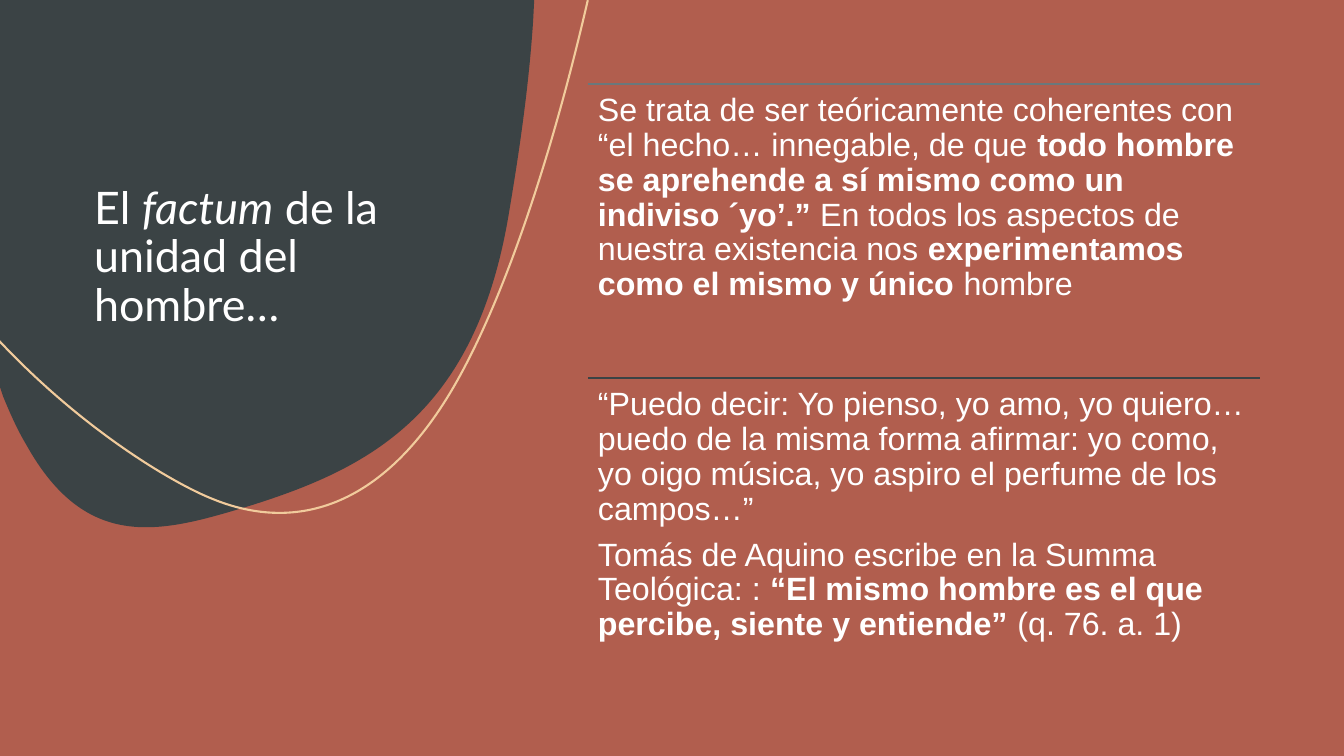
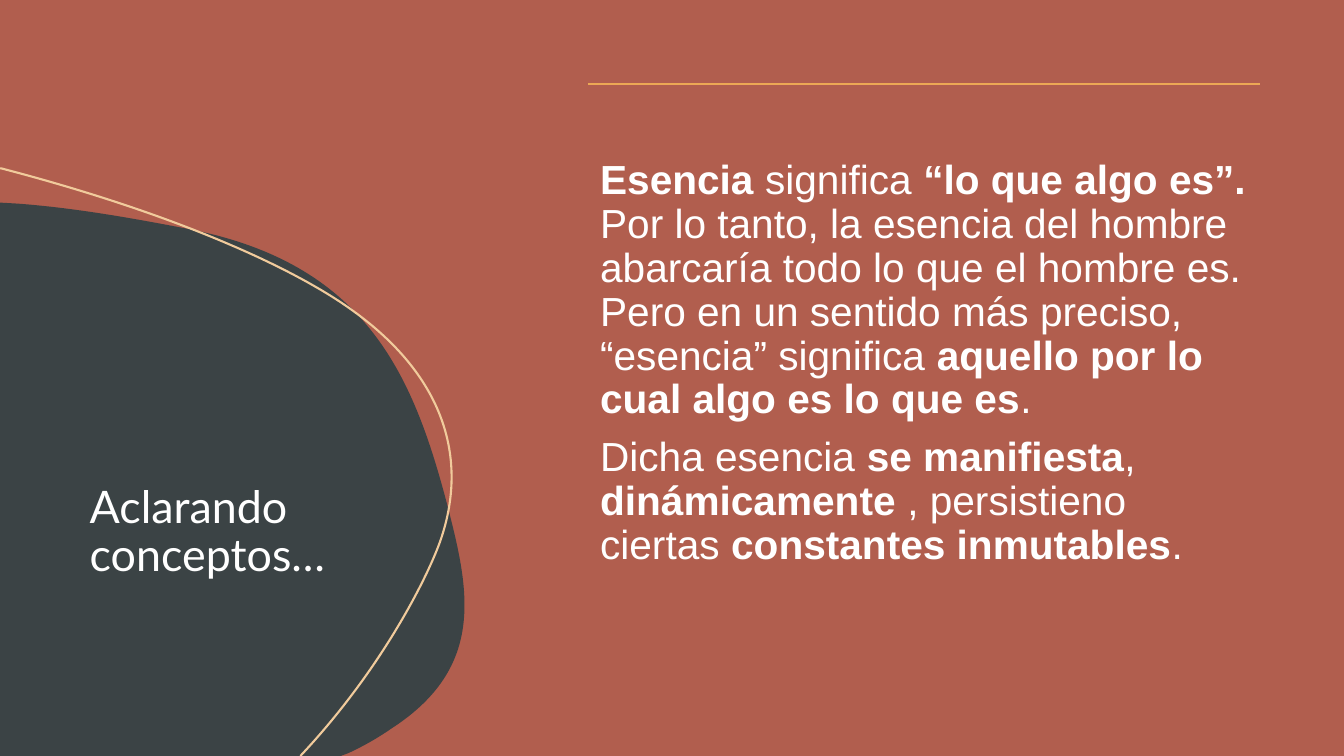
import pptx
import pptx.util
import pptx.dml.color
import pptx.enum.shapes
import pptx.enum.text
import pptx.oxml.ns
from lxml import etree

Inches, Pt = pptx.util.Inches, pptx.util.Pt
RGBColor = pptx.dml.color.RGBColor
qn = pptx.oxml.ns.qn

TERRACOTTA = RGBColor(0xB1, 0x5E, 0x4E)
SLATE = RGBColor(0x3B, 0x43, 0x45)
SLATE_LIGHT = RGBColor(0x6A, 0x78, 0x7C)
SAND = RGBColor(0xF1, 0xCB, 0x9C)
AMBER = RGBColor(0xEC, 0xA8, 0x55)
WHITE = RGBColor(0xFF, 0xFF, 0xFF)

TITLE_FONT, BODY_FONT = "Lato", "Arial"
SLIDE_W, SLIDE_H = 40 / 3, 7.5
MARGIN = SLIDE_W / 16
BODY_X, BODY_Y, BODY_W = 7 * MARGIN, MARGIN, 8 * MARGIN
PANEL_H = 3.5 * MARGIN

TOP_BLOB = (0, 0, 5.3, 5.23), [
    (5.3, 0), (5.29, 0.2),
    (5.25, 0.82, 5.16, 1.46, 5.05, 2.11),
    (4.72, 4.11, 3.67, 4.65, 2.44, 5.03),
    (1.61, 5.28, 0.86, 5.49, 0.26, 4.41),
    (0.17, 4.26, 0.1, 4.1, 0.03, 3.93),
    (0, 3.84), (0, 0), (5.3, 0),
]
TOP_ARC = (0, 0, 5.83, 5.09), [
    (5.83, 0), (5.83, 0.01),
    (5.47, 1.57, 5.01, 2.93, 4.54, 3.77),
    (3.83, 5.04, 2.94, 5.29, 2.11, 4.95),
    (1.73, 4.8, 0.84, 4.28, 0, 3.39),
    (0, 3.38),
]
BOTTOM_BLOB = (0, 2.01, 4.61, 5.49), [
    (0, 2.01), (0.17, 2.02),
    (0.72, 2.06, 1.29, 2.16, 1.86, 2.27),
    (3.62, 2.61, 4.09, 3.7, 4.43, 4.98),
    (4.65, 5.83, 4.84, 6.61, 3.88, 7.23),
    (3.75, 7.32, 3.61, 7.4, 3.46, 7.47),
    (3.38, 7.5), (0, 7.5), (0, 2.01),
]
BOTTOM_ARC = (0, 1.67, 4.48, 5.83), [
    (0, 1.67), (0.01, 1.67),
    (1.39, 2.03, 2.58, 2.49, 3.32, 2.96),
    (4.43, 3.67, 4.66, 4.56, 4.36, 5.39),
    (4.22, 5.77, 3.77, 6.66, 2.98, 7.5),
    (2.98, 7.5),
]


def add_curve(s, outline, fill=None, line=None):
    """Draw a filled closed shape or an open stroked curve with Bézier segments."""
    (x, y, w, h), segments = outline
    ends = [(Inches(seg[-2]), Inches(seg[-1])) for seg in segments]
    fb = s.shapes.build_freeform(*ends[0])
    fb.add_line_segments(ends[1:], close=fill is not None)
    sp = fb.convert_to_shape()
    sp.left, sp.top, sp.width, sp.height = map(Inches, (x, y, w, h))
    outline_el = next(sp._element.iter(qn("a:path")))
    outline_el.set("w", str(Inches(w)))
    outline_el.set("h", str(Inches(h)))
    for el, seg in zip(list(outline_el), segments):
        for pt in list(el):
            el.remove(pt)
        if len(seg) == 6:
            curve = etree.Element(qn("a:cubicBezTo"))
            outline_el.replace(el, curve)
            el = curve
        for px, py in zip(seg[::2], seg[1::2]):
            etree.SubElement(el, qn("a:pt"), x=str(Inches(px - x)), y=str(Inches(py - y)))
    sp.shadow.inherit = False
    if fill is None:
        sp.fill.background()
        sp.line.color.rgb = line
        sp.line.width = Pt(1.5)
    else:
        sp.fill.solid()
        sp.fill.fore_color.rgb = fill
        sp.line.fill.background()


def add_backdrop(s, color):
    """Cover the slide with one colour."""
    s.background.fill.solid()
    s.background.fill.fore_color.rgb = color
    sp = s.shapes.add_shape(pptx.enum.shapes.MSO_SHAPE.RECTANGLE,
                            0, 0, Inches(SLIDE_W), Inches(SLIDE_H))
    sp.shadow.inherit = False
    sp.fill.solid()
    sp.fill.fore_color.rgb = color
    sp.line.fill.background()


def add_rule(s, x, y, w, color):
    """Draw a thin horizontal rule."""
    cx = s.shapes.add_connector(pptx.enum.shapes.MSO_CONNECTOR.STRAIGHT,
                                Inches(x), Inches(y), Inches(x + w), Inches(y))
    cx.line.color.rgb = color
    cx.line.width = Pt(1)
    etree.SubElement(cx._element.spPr, qn("a:effectLst"))


def add_run(p, text, font=BODY_FONT, size=23, color=WHITE, bold=False, italic=False):
    """Append a formatted run to a paragraph."""
    r = p.add_run()
    r.text = text
    r.font.name, r.font.size = font, Pt(size)
    r.font.bold, r.font.italic = bold, italic
    r.font.color.rgb = color


def add_body(s, x, y, w, h, paragraphs, size=23, inset=0.1):
    """Place paragraphs whose runs alternate between regular and bold."""
    tf = s.shapes.add_textbox(Inches(x), Inches(y), Inches(w), Inches(h)).text_frame
    tf.word_wrap = True
    tf.margin_left = tf.margin_right = tf.margin_top = tf.margin_bottom = Inches(inset)
    for i, runs in enumerate(paragraphs):
        p = tf.add_paragraph() if i else tf.paragraphs[0]
        p.line_spacing = 0.9
        p.space_after = Pt(round(size * 0.35))
        for j, text in enumerate(runs):
            if text:
                add_run(p, text, size=size, bold=j % 2 == 1)


def add_title(s, x, y, runs):
    """Format the title from runs that alternate between upright and italic."""
    title = s.shapes.title
    title.left, title.top = Inches(x), Inches(y)
    title.width, title.height = Inches(4 * MARGIN), Inches(3 * MARGIN)
    s.shapes._spTree.append(title._element)
    tf = title.text_frame
    tf.word_wrap = True
    tf.auto_size = pptx.enum.text.MSO_AUTO_SIZE.NONE
    tf.vertical_anchor = pptx.enum.text.MSO_ANCHOR.BOTTOM
    p = tf.paragraphs[0]
    p.alignment = pptx.enum.text.PP_ALIGN.LEFT
    p.line_spacing = 0.9
    for i, text in enumerate(runs):
        add_run(p, text, font=TITLE_FONT, size=32, italic=i % 2 == 1)


def new_slide(prs, blob, arc, title_x, title_y, title):
    """Add a slide with its backdrop, blob, arc and title."""
    s = prs.slides.add_slide(prs.slide_layouts[5])
    add_backdrop(s, TERRACOTTA)
    add_curve(s, blob, fill=SLATE)
    add_curve(s, arc, line=SAND)
    add_title(s, title_x, title_y, title)
    return s


def add_unity_slide(prs):
    """Build the slide on the unity of man."""
    s = new_slide(prs, TOP_BLOB, TOP_ARC, MARGIN, MARGIN,
                  ["El ", "factum", " de la unidad del hombre…"])
    panels = [
        (SLATE_LIGHT, [
            ["Se trata de ser teóricamente coherentes con “el hecho… innegable, de que ",
             "todo hombre se aprehende a sí mismo como un indiviso ´yo’.” ",
             "En todos los aspectos de nuestra existencia nos ",
             "experimentamos como el mismo y único ", "hombre"]]),
        (SLATE, [
            ["“Puedo decir: Yo pienso, yo amo, yo quiero… puedo de la misma forma "
             "afirmar: yo como, yo oigo música, yo aspiro el perfume de los campos…”"],
            ["Tomás de Aquino escribe en la Summa Teológica: : ",
             "“El mismo hombre es el que percibe, siente y entiende” ",
             "(q. 76. a. 1)"]]),
    ]
    for i, (color, paragraphs) in enumerate(panels):
        y = BODY_Y + i * PANEL_H
        add_rule(s, BODY_X, y, BODY_W, color)
        add_body(s, BODY_X, y, BODY_W, PANEL_H, paragraphs)


def add_concepts_slide(prs):
    """Build the slide that clarifies the concept of essence."""
    s = new_slide(prs, BOTTOM_BLOB, BOTTOM_ARC, 0.79, 3.32, ["Aclarando conceptos…"])
    add_rule(s, BODY_X, BODY_Y, BODY_W, AMBER)
    add_body(s, BODY_X, BODY_Y + 0.63, BODY_W, 4.36, [
        ["", "Esencia ", "significa ", "“lo que algo es”. ",
         "Por lo tanto, la esencia del hombre abarcaría todo lo que el hombre es. "
         "Pero en un sentido más preciso, “esencia” significa ",
         "aquello por lo cual algo es lo que es", "."],
        ["Dicha esencia ", "se manifiesta", ", ", "dinámicamente",
         " , persistieno ciertas ", "constantes inmutables", "."],
    ], size=29, inset=0.12)


def main():
    """Build and save the presentation."""
    prs = pptx.Presentation()
    prs.slide_width, prs.slide_height = Inches(SLIDE_W), Inches(SLIDE_H)
    add_unity_slide(prs)
    add_concepts_slide(prs)
    prs.save("out.pptx")


if __name__ == "__main__":
    main()
